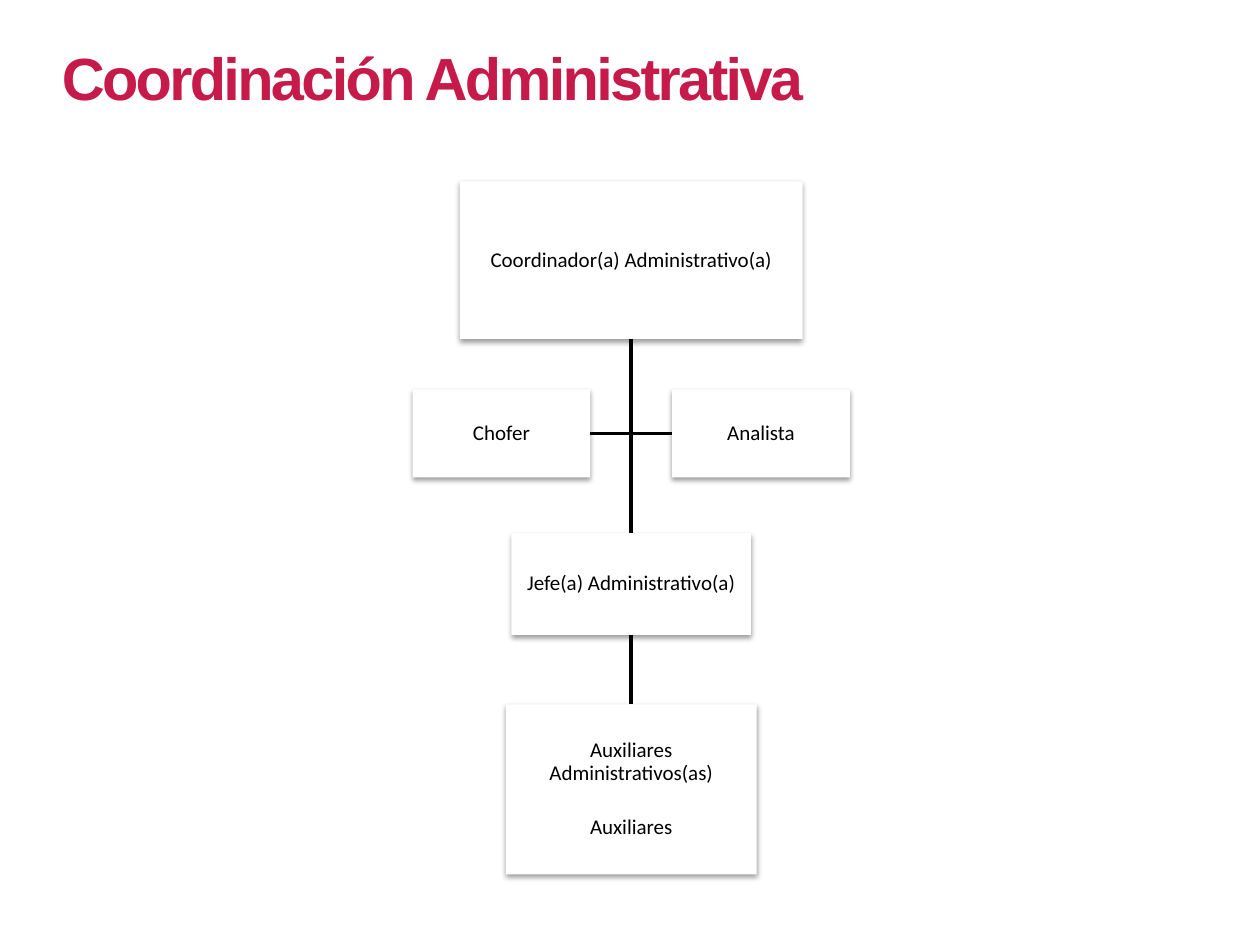
from dataclasses import dataclass

from lxml.etree import SubElement
from pptx import Presentation
from pptx.dml.color import RGBColor
from pptx.enum.shapes import MSO_CONNECTOR, MSO_SHAPE
from pptx.enum.text import MSO_ANCHOR, MSO_AUTO_SIZE, PP_ALIGN
from pptx.oxml.ns import qn
from pptx.shapes.autoshape import Shape
from pptx.slide import Slide
from pptx.util import Inches, Pt

CENTER = 5.01
SIDE_OFFSET = 1.03
BOTTOM, LEFT, TOP, RIGHT = 2, 1, 0, 3


@dataclass
class Position:
    text: str
    center: float
    top: float
    width: float
    height: float


@dataclass
class Link:
    start: str
    start_side: int
    end: str
    end_side: int


POSITIONS = {
    "coordinator": Position("Coordinador(a) Administrativo(a)", CENTER, 1.44, 2.72, 1.25),
    "chief": Position("Jefe(a) Administrativo(a)", CENTER, 4.23, 1.9, 0.81),
    "assistants": Position(
        "Auxiliares\vAdministrativos(as)\nAuxiliares", CENTER, 5.59, 1.99, 1.35
    ),
    "driver": Position("Chofer", CENTER - SIDE_OFFSET, 3.09, 1.41, 0.7),
    "analyst": Position("Analista", CENTER + SIDE_OFFSET, 3.09, 1.41, 0.7),
}

LINKS = [
    Link("coordinator", BOTTOM, "chief", TOP),
    Link("chief", BOTTOM, "assistants", TOP),
    Link("driver", RIGHT, "analyst", LEFT),
]


def color(value: str) -> RGBColor:
    return RGBColor.from_string(value)


def add_shadow(box: Shape) -> None:
    effects = SubElement(box._element.spPr, qn("a:effectLst"))
    shadow = SubElement(
        effects, qn("a:outerShdw"), blurRad=str(Pt(3.1)), dist=str(Pt(1.6)),
        dir="5400000", rotWithShape="0",
    )
    black = SubElement(shadow, qn("a:srgbClr"), val="000000")
    SubElement(black, qn("a:alpha"), val="38000")


def add_title(page: Slide, text: str) -> None:
    title = page.shapes.title
    title.left, title.top = Inches(0.39), Inches(0.26)
    title.width, title.height = Inches(6.97), Inches(0.69)
    frame = title.text_frame
    frame.text = text
    frame.word_wrap = True
    frame.auto_size = MSO_AUTO_SIZE.SHAPE_TO_FIT_TEXT
    para = frame.paragraphs[0]
    para.alignment = PP_ALIGN.LEFT
    span = para.runs[0]
    span.font.name = "Arial"
    span.font.size = Pt(34)
    span.font.bold = True
    span.font.color.rgb = color("C51A4A")
    span._r.get_or_add_rPr().set("spc", "-150")


def add_position(page: Slide, position: Position) -> Shape:
    box = page.shapes.add_shape(
        MSO_SHAPE.RECTANGLE,
        Inches(position.center - position.width / 2), Inches(position.top),
        Inches(position.width), Inches(position.height),
    )
    box.fill.solid()
    box.fill.fore_color.rgb = color("FFFFFF")
    box.line.fill.background()
    add_shadow(box)
    frame = box.text_frame
    frame.word_wrap = True
    frame.vertical_anchor = MSO_ANCHOR.MIDDLE
    frame.margin_left = frame.margin_right = Inches(0.01)
    frame.margin_top = frame.margin_bottom = Inches(0.01)
    frame.text = position.text
    for index, para in enumerate(frame.paragraphs):
        para.alignment = PP_ALIGN.CENTER
        para.line_spacing = 0.9
        para.space_before = Pt(18 if index else 0)
        for span in para.runs:
            span.font.name = "Calibri"
            span.font.size = Pt(12)
            span.font.color.rgb = color("000000")
    return box


def add_link(page: Slide, link: Link, boxes: dict[str, Shape]) -> None:
    line = page.shapes.add_connector(MSO_CONNECTOR.STRAIGHT, 0, 0, 0, 0)
    line.begin_connect(boxes[link.start], link.start_side)
    line.end_connect(boxes[link.end], link.end_side)
    line.line.color.rgb = color("000000")
    line.line.width = Pt(2)
    SubElement(line._element.spPr, qn("a:effectLst"))


def main() -> None:
    deck = Presentation()
    deck.slide_width, deck.slide_height = Inches(10), Inches(7.5)
    page = deck.slides.add_slide(deck.slide_layouts[5])
    add_title(page, "Coordinación Administrativa")
    boxes = {name: add_position(page, position) for name, position in POSITIONS.items()}
    for link in LINKS:
        add_link(page, link, boxes)
    deck.save("out.pptx")


if __name__ == "__main__":
    main()
